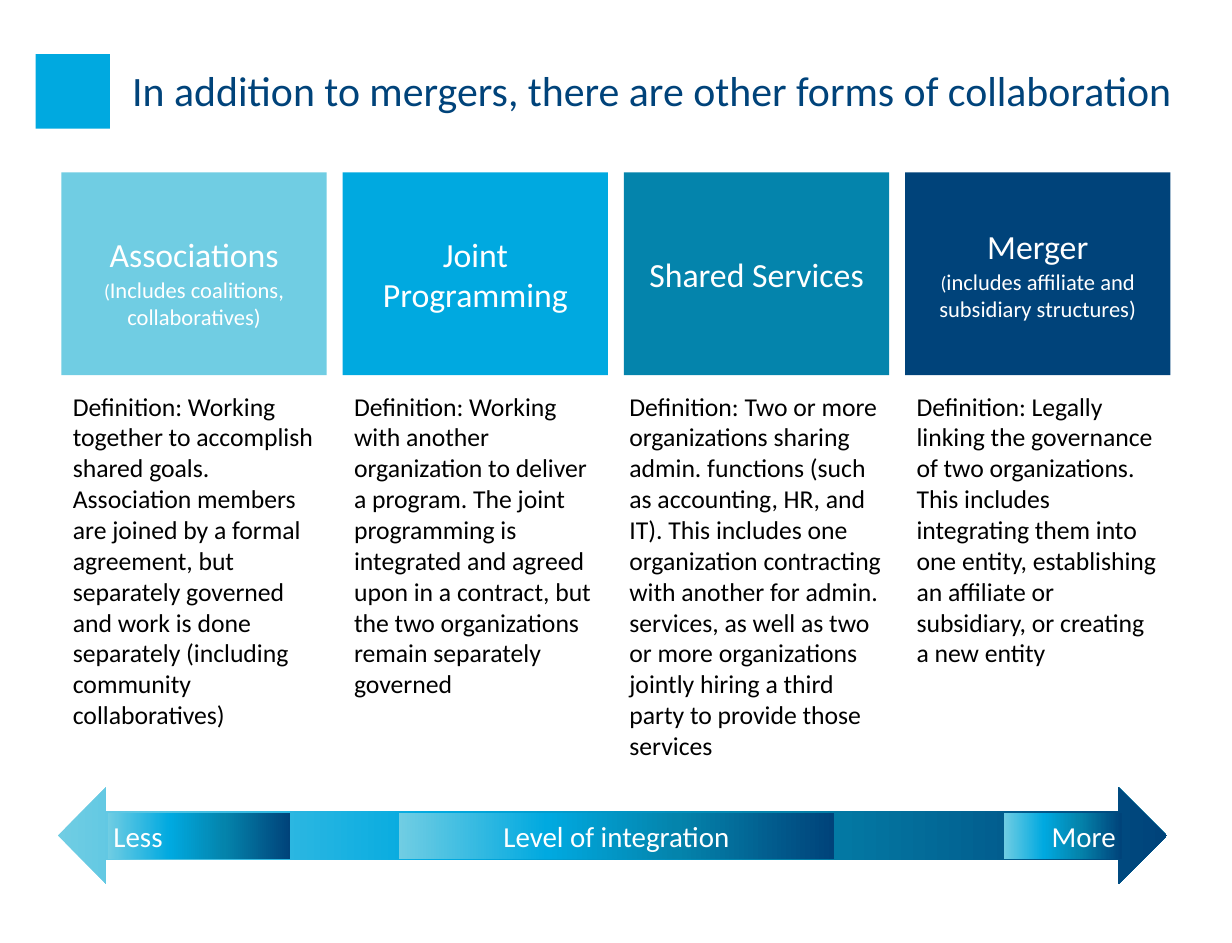
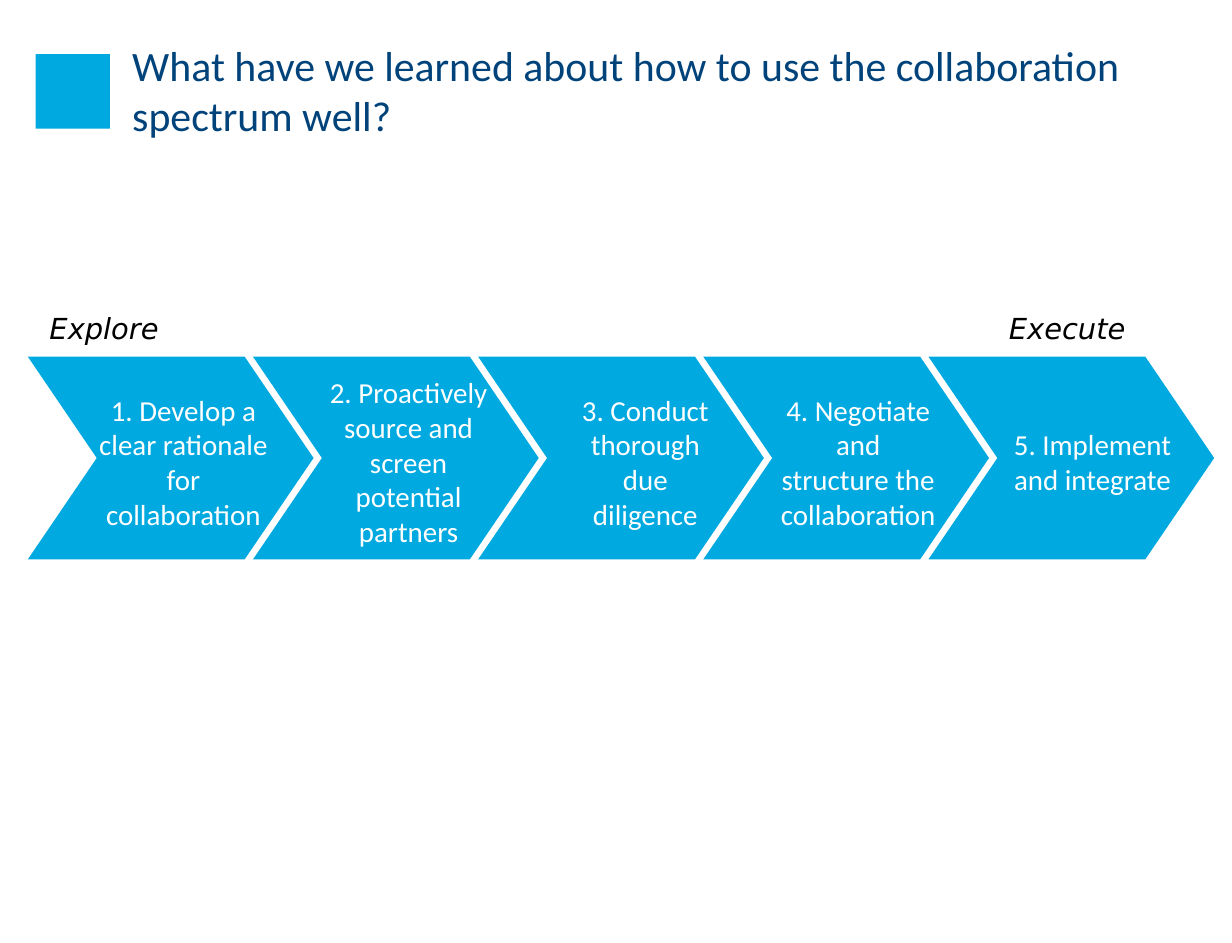
from lxml import etree
from pptx import Presentation
from pptx.dml.color import RGBColor
from pptx.enum import shapes as shp, text as txt
from pptx.oxml import ns
from pptx.util import Cm, Pt

COLORS = {"sky": "70CDE3", "cyan": "00A9E0", "teal": "0484AC",
          "navy": "00437A", "white": "FFFFFF", "black": "000000"}
BODY_FONT, STAGE_FONT = "Calibri", "DejaVu Sans"
LEFT, CENTER, RIGHT = txt.PP_ALIGN.LEFT, txt.PP_ALIGN.CENTER, txt.PP_ALIGN.RIGHT
TOP, MIDDLE = txt.MSO_ANCHOR.TOP, txt.MSO_ANCHOR.MIDDLE
TIGHT = (0.13, 0.13, 0.13, 0.13)
ROOMY = (0.25, 0.13, 0.25, 0.13)

# Content: forms of collaboration
FORMS_TITLE = "In addition to mergers, there are other forms of collaboration"
FORMS = [
    {"name": "Associations", "note": "Includes coalitions, collaboratives)",
     "color": "sky", "drop": 0.35, "widen": 0,
     "definition": "Definition: Working together to accomplish shared goals. "
                   "Association members are joined by a formal agreement, but "
                   "separately governed and work is done separately (including "
                   "community collaboratives)"},
    {"name": "Joint Programming", "note": "", "color": "cyan", "drop": 0, "widen": 0,
     "definition": "Definition: Working with another organization to deliver a "
                   "program. The joint programming is integrated and agreed upon "
                   "in a contract, but the two organizations remain separately "
                   "governed"},
    {"name": "Shared Services", "note": "", "color": "teal", "drop": 0, "widen": 0.13,
     "definition": "Definition: Two or more organizations sharing admin. functions "
                   "(such as accounting, HR, and IT). This includes one organization "
                   "contracting with another for admin. services, as well as two or "
                   "more organizations jointly hiring a third party to provide those "
                   "services"},
    {"name": "Merger", "note": "includes affiliate and subsidiary structures)",
     "color": "navy", "drop": 0, "widen": 0,
     "definition": "Definition: Legally linking the governance of two organizations. "
                   "This includes integrating them into one entity, establishing an "
                   "affiliate or subsidiary, or creating a new entity"},
]
SPECTRUM = [(0, "sky"), (34, "cyan"), (64, "teal"), (100, "navy")]
# Label, left, width, alignment
SCALE = [("Less", 2.36, 4.01, LEFT), ("More", 22.02, 2.59, RIGHT),
         ("Level of integration", 8.76, 9.53, CENTER)]

# Content: steps; text, left and width of its label
STEPS_TITLE = "What have we learned about how to use the collaboration spectrum well?"
STEPS = [("1. Develop a clear rationale for collaboration", 1.98, 4.09),
         ("2. Proactively source and screen potential partners", 6.88, 4.17),
         ("3. Conduct thorough due diligence", 12.37, 3.58),
         ("4. Negotiate and structure the collaboration", 16.99, 3.68),
         ("5. Implement and integrate", 21.95, 4.04)]
STAGES = [("Explore", 0), ("Execute", 21.13)]

# Layout, in centimetres
COLUMN = {"left": 1.35, "step": 6.17, "width": 5.82}
CHEVRON = {"left": 0.61, "step": 4.94, "top": 7.82, "width": 6.27, "height": 4.45}


def rgb(name):
    return RGBColor.from_string(COLORS[name])


def set_all(target, values):
    for key, value in values.items():
        setattr(target, key, value)


def write(frame, paragraphs, color, align=LEFT, anchor=TOP, insets=TIGHT,
          font=BODY_FONT, italic=None):
    """Fill a text frame; each paragraph is a list of (text, size) runs."""
    set_all(frame, {"word_wrap": True, "vertical_anchor": anchor,
                    "auto_size": txt.MSO_AUTO_SIZE.NONE})
    sides = ("margin_left", "margin_top", "margin_right", "margin_bottom")
    set_all(frame, {side: Cm(inset) for side, inset in zip(sides, insets)})
    for index, runs in enumerate(paragraphs):
        para = frame.add_paragraph() if index else frame.paragraphs[0]
        para.alignment = align
        if index:
            para.space_before = Pt(1)
        for words, size in runs:
            run = para.add_run()
            run.text = words
            set_all(run.font, {"name": font, "size": Pt(size), "italic": italic})
            run.font.color.rgb = rgb(color)


def add_block(shapes, kind, box, color=None):
    """Add a borderless shape, in the spectrum gradient when no colour is given."""
    block = shapes.add_shape(kind, *map(Cm, box))
    block.shadow.inherit = False
    block.line.fill.background()
    if color:
        block.fill.solid()
        block.fill.fore_color.rgb = rgb(color)
        return block
    block.fill.gradient()
    block.fill.gradient_angle = 0
    stops = block.element.find(".//" + ns.qn("a:gsLst"))
    for stop in list(stops):
        stops.remove(stop)
    for percent, name in SPECTRUM:
        stop = etree.SubElement(stops, ns.qn("a:gs"), pos=str(percent * 1000))
        etree.SubElement(stop, ns.qn("a:srgbClr"), val=COLORS[name])
    return block


def add_label(slide, words, size, box, color, **style):
    label = slide.shapes.add_textbox(*map(Cm, box))
    write(label.text_frame, [[(words, size)]], color, **style)


def add_titled_slide(prs, words):
    slide = prs.slides.add_slide(prs.slide_layouts[5])
    title = slide.shapes.title
    set_all(title, {"left": Cm(2.9), "top": Cm(0.43),
                    "width": Cm(23.7), "height": Cm(3.07)})
    write(title.text_frame, [[(words, 26)]], "navy", anchor=MIDDLE,
          insets=(0, 0, 0.2, 0))
    return slide


def build_forms(prs):
    slide = add_titled_slide(prs, FORMS_TITLE)
    rectangle = shp.MSO_SHAPE.RECTANGLE
    # Headings and definitions
    for index, form in enumerate(FORMS):
        left = COLUMN["left"] + index * COLUMN["step"]
        heading = add_block(slide.shapes, rectangle,
                            (left, 3.78, COLUMN["width"], 4.45), form["color"])
        lines = [[(form["name"], 21)]]
        if form["note"]:
            lines.append([("(", 12), (form["note"], 14)])
        write(heading.text_frame, lines, "white", CENTER, MIDDLE,
              (0.13, 0.13 + form["drop"], 0.13, 0.13))
        widen = form["widen"]
        add_label(slide, form["definition"], 16,
                  (left - widen, 8.43, COLUMN["width"] + 2 * widen, 8.46),
                  "black", insets=ROOMY)
    # Integration scale
    scale = slide.shapes.add_group_shape().shapes
    add_block(scale, shp.MSO_SHAPE.LEFT_RIGHT_ARROW, (1.27, 17.27, 24.33, 2.11))
    for words, left, width, align in SCALE:
        band = add_block(scale, rectangle, (left, 17.83, width, 1.02))
        write(band.text_frame, [[(words, 18)]], "white", align)


def build_steps(prs):
    slide = add_titled_slide(prs, STEPS_TITLE)
    top, width, height = (CHEVRON[key] for key in ("top", "width", "height"))
    for index in range(len(STEPS)):
        left = CHEVRON["left"] + index * CHEVRON["step"]
        chevron = add_block(slide.shapes, shp.MSO_SHAPE.CHEVRON,
                            (left, top, width, height), "cyan")
        chevron.adjustments[0] = 0.34
    for words, left, label_width in STEPS:
        add_label(slide, words, 18, (left, top + 0.08, label_width, height),
                  "white", align=CENTER, anchor=MIDDLE)
    for words, left in STAGES:
        add_label(slide, words, 18, (left, 6.68, 4.57, 1.02), "black",
                  align=CENTER, font=STAGE_FONT, italic=True)


def main():
    prs = Presentation()
    set_all(prs, {"slide_width": Cm(27.03), "slide_height": Cm(20.68)})
    build_forms(prs)
    build_steps(prs)
    # Title marker, moved to the layout that both slides share
    marker = add_block(prs.slides[0].shapes, shp.MSO_SHAPE.RECTANGLE,
                       (0.78, 1.19, 1.63, 1.63), "cyan")
    prs.slide_layouts[5].shapes.element.append(marker.element)
    prs.save("out.pptx")


if __name__ == "__main__":
    main()
